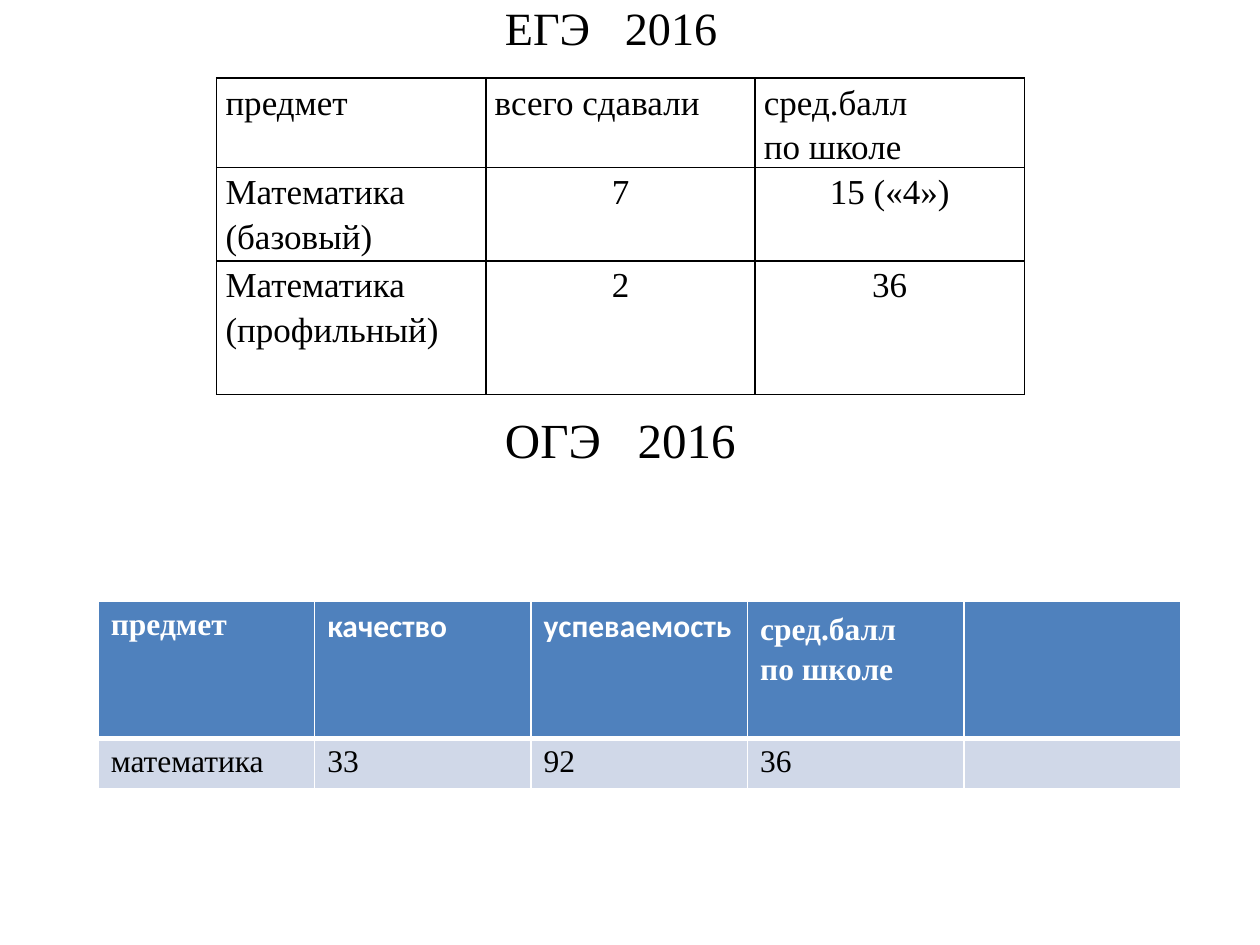
from dataclasses import dataclass

from lxml import etree
from pptx import Presentation
from pptx.dml.color import RGBColor
from pptx.enum.text import MSO_ANCHOR, PP_ALIGN
from pptx.oxml.ns import qn
from pptx.util import Inches, Pt

LEFT, CENTER = PP_ALIGN.LEFT, PP_ALIGN.CENTER
TOP = MSO_ANCHOR.TOP
TITLE_ONLY = 5


@dataclass(frozen=True)
class Theme:
    serif: str = "Times New Roman"
    sans: str = "Calibri"
    black: str = "000000"
    white: str = "FFFFFF"
    header_fill: str = "4F81BD"
    row_fill: str = "D0D8E8"
    title_size: float = 26.4
    subtitle_size: float = 28
    exam_size: float = 20
    results_size: float = 18


THEME = Theme()


def apply(target, values):
    for name, value in values.items():
        setattr(target, name, value)


def format_font(font, size, color, name=THEME.serif, bold=False):
    apply(font, {"name": name, "size": Pt(size), "bold": bold})
    font.color.rgb = RGBColor.from_string(color)


def write_heading(shape, words, size, alignment, line_spacing, top_inset):
    """Write two words, set apart by one widened space."""
    frame = shape.text_frame
    apply(frame, {"word_wrap": True, "vertical_anchor": TOP,
                  "margin_top": Inches(top_inset)})
    paragraph = frame.paragraphs[0]
    apply(paragraph, {"alignment": alignment, "line_spacing": line_spacing})
    first, second = words
    for text in (first, " ", second):
        run = paragraph.add_run()
        run.text = text
        format_font(run.font, size, THEME.black)
        if text == " ":
            # Half an em more, in hundredths of a point
            run.font._element.set("spc", str(round(size * 50)))


def set_borders(cell, color, widths):
    """Draw the cell borders; widths are left, right, top, bottom in points."""
    properties = cell._tc.get_or_add_tcPr()
    for side, width in zip("LRTB", widths):
        line = etree.SubElement(properties, qn(f"a:ln{side}"), w=str(Pt(width)))
        fill = etree.SubElement(line, qn("a:solidFill"))
        etree.SubElement(fill, qn("a:srgbClr"), val=color)


def write_cell(cell, text, alignment, line_spacing, **font_values):
    cell.text = text
    for paragraph in cell.text_frame.paragraphs:
        apply(paragraph, {"alignment": alignment, "line_spacing": line_spacing})
        for run in paragraph.runs:
            format_font(run.font, **font_values)


def add_plain_table(slide, box, columns, row_heights):
    shape = slide.shapes.add_table(len(row_heights), columns,
                                   *(Inches(value) for value in box))
    table = shape.table
    apply(table, {"first_row": False, "horz_banding": False})
    for column in table.columns:
        column.width = Inches(box[2] / columns)
    for row, height in zip(table.rows, row_heights):
        row.height = Inches(height)
    return table


def add_exam_table(slide, box):
    rows = [
        ["предмет", "всего сдавали", "сред.балл\nпо школе"],
        ["Математика\n(базовый)", "7", "15 («4»)"],
        ["Математика (профильный)", "2", "36"],
    ]
    margins = {"margin_left": Inches(0.07), "margin_right": Inches(0.07),
               "margin_top": 0, "margin_bottom": 0}
    table = add_plain_table(slide, box, 3, [0.71, 0.74, 1.06])
    for row_index, row in enumerate(rows):
        for column_index, text in enumerate(row):
            cell = table.cell(row_index, column_index)
            apply(cell, margins)
            set_borders(cell, THEME.black, (1, 1, 1, 1))
            cell.fill.background()
            alignment = CENTER if row_index and column_index else LEFT
            write_cell(cell, text, alignment, 1.15,
                       size=THEME.exam_size, color=THEME.black)


def add_results_table(slide, box):
    headers = [
        ("предмет", THEME.serif, 1),
        ("качество", THEME.sans, 1),
        ("успеваемость", THEME.sans, 1),
        ("сред.балл\nпо школе", THEME.serif, 1.15),
        ("", THEME.serif, 1),
    ]
    values = ["математика", "33", "92", "36", ""]
    table = add_plain_table(slide, box, len(headers), [1.09, 0.4])
    for index, ((header, font, spacing), value) in enumerate(zip(headers, values)):
        # Header cell
        cell = table.cell(0, index)
        set_borders(cell, THEME.white, (1, 1, 1, 3))
        cell.fill.solid()
        cell.fill.fore_color.rgb = RGBColor.from_string(THEME.header_fill)
        write_cell(cell, header, LEFT, spacing, size=THEME.results_size,
                   color=THEME.white, name=font, bold=True)
        # Value cell
        cell = table.cell(1, index)
        set_borders(cell, THEME.white, (1, 1, 3, 1))
        cell.fill.solid()
        cell.fill.fore_color.rgb = RGBColor.from_string(THEME.row_fill)
        write_cell(cell, value, LEFT, 1,
                   size=THEME.results_size, color=THEME.black)


def add_title(slide, box):
    title = slide.shapes.title
    apply(title, dict(zip(("left", "top", "width", "height"),
                          (Inches(value) for value in box))))
    write_heading(title, ("ЕГЭ", "2016"), THEME.title_size, CENTER, 0.8, 0.08)


def add_subtitle(slide, box):
    shape = slide.shapes.add_textbox(*(Inches(value) for value in box))
    write_heading(shape, ("ОГЭ", "2016"), THEME.subtitle_size, LEFT, 1, 0.05)


def main():
    presentation = Presentation()
    apply(presentation, {"slide_width": Inches(10), "slide_height": Inches(7.5)})
    slide = presentation.slides.add_slide(presentation.slide_layouts[TITLE_ONLY])
    # State exam: heading and table
    add_title(slide, (0.55, 0, 8.6, 0.86))
    add_exam_table(slide, (1.72, 0.62, 6.41, 2.51))
    # Main exam: heading and table
    add_subtitle(slide, (3.91, 3.2, 2.1, 1.82))
    add_results_table(slide, (0.78, 4.77, 8.59, 1.49))
    presentation.save("out.pptx")


if __name__ == "__main__":
    main()
